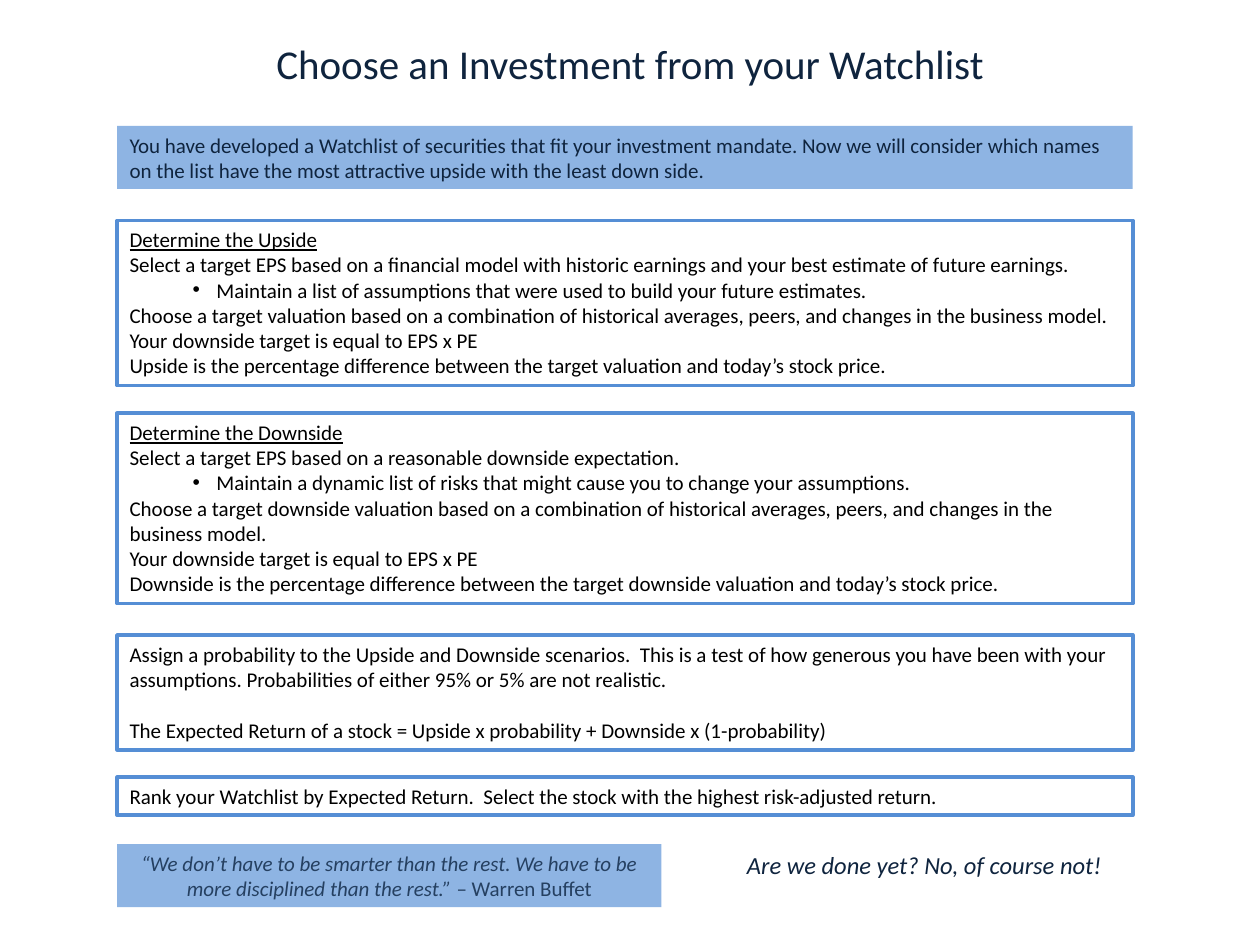
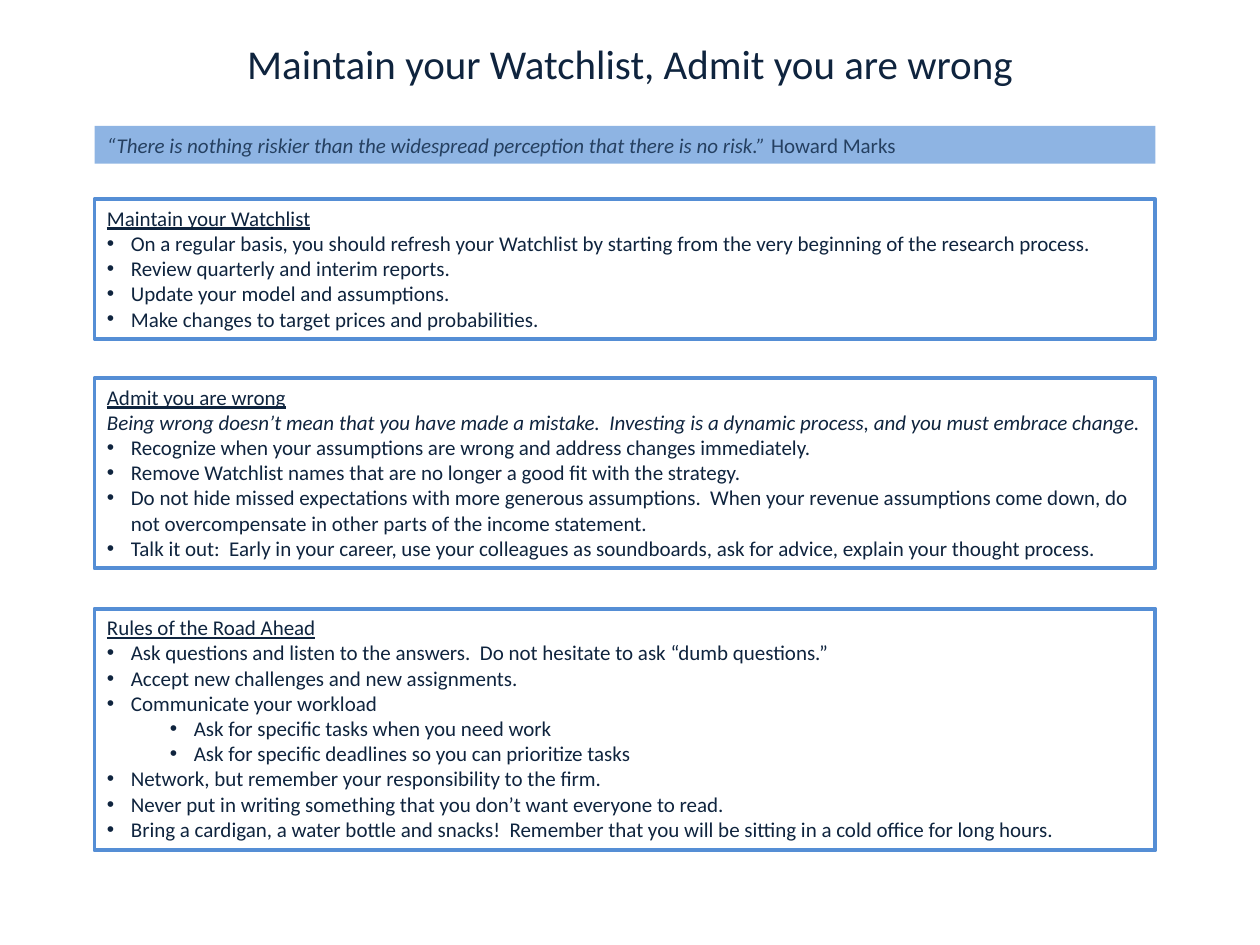
"""Build two slides on choosing an investment and maintaining a watchlist."""
from dataclasses import dataclass

from lxml import etree
from pptx import Presentation
from pptx import util as u
from pptx.dml.color import RGBColor
from pptx.enum import shapes, text
from pptx.oxml import ns


@dataclass(frozen=True)
class Theme:
    font: str = "Calibri"
    navy: str = "0F243E"
    slate: str = "254061"
    black: str = "000000"
    band: str = "8EB4E3"
    frame: str = "558ED5"
    title_size: float = 23.4
    remark_size: int = 14
    body_size: int = 12
    body_line: float = 14.6
    frame_width: float = 2.25


THEME = Theme()
PX = u.Inches(1) // 100
BULLET_HANG = 19
INDENTS = {"bullet": 19, "sub": 69}


def px(length):
    return u.Emu(length * PX)


def add_text(page, bounds, lines, color=THEME.navy, size=THEME.body_size,
             fill=None, frame=None, align=text.PP_ALIGN.LEFT,
             anchor=text.MSO_ANCHOR.TOP):
    """Add a text box from lines of (style, span, upright span)."""
    place = [px(length) for length in bounds]
    if fill or frame:
        box = page.shapes.add_shape(shapes.MSO_SHAPE.RECTANGLE, *place)
        box.shadow.inherit = False
    else:
        box = page.shapes.add_textbox(*place)
    if fill:
        box.fill.solid()
        box.fill.fore_color.rgb = RGBColor.from_string(fill)
    else:
        box.fill.background()
    if frame:
        box.line.color.rgb = RGBColor.from_string(frame)
        box.line.width = u.Pt(THEME.frame_width)
    else:
        box.line.fill.background()
    body = box.text_frame
    body.word_wrap = True
    body.vertical_anchor = anchor
    for number, (style, *spans) in enumerate(lines):
        para = body.paragraphs[0] if number == 0 else body.add_paragraph()
        para.alignment = align
        if style == "spaced":
            para.space_before = u.Pt(THEME.body_line)
        if style in INDENTS:
            layout = para._p.get_or_add_pPr()
            layout.set("marL", str(px(INDENTS[style])))
            layout.set("indent", str(-px(BULLET_HANG)))
            etree.SubElement(layout, ns.qn("a:buFont")).set("typeface", "Arial")
            etree.SubElement(layout, ns.qn("a:buChar")).set("char", "•")
        for order, words in enumerate(spans):
            span = para.add_run()
            span.text = words
            span.font.name = THEME.font
            span.font.size = u.Pt(size)
            span.font.color.rgb = RGBColor.from_string(color)
            span.font.underline = style == "heading"
            span.font.italic = style == "italic" and order == 0


def add_page(deck, title):
    page = deck.slides.add_slide(deck.slide_layouts[6])
    add_text(page, (75, 25, 850, 50), [("plain", title)], size=THEME.title_size,
             align=text.PP_ALIGN.CENTER, anchor=text.MSO_ANCHOR.MIDDLE)
    return page


deck = Presentation()
deck.slide_width, deck.slide_height = px(1000), px(750)

choose = add_page(deck, "Choose an Investment from your Watchlist")
add_text(choose, (93, 100, 806, 50), [
    ("plain", "You have developed a Watchlist of securities that fit your investment mandate. Now we will "
              "consider which names on the list have the most attractive upside with the least down side."),
], fill=THEME.band)

choose_steps = [
    (175, 131, [
        ("heading", "Determine the Upside"),
        ("plain", "Select a target EPS based on a financial model with historic earnings and your best "
                  "estimate of future earnings."),
        ("sub", "Maintain a list of assumptions that were used to build your future estimates."),
        ("plain", "Choose a target valuation based on a combination of historical averages, peers, and "
                  "changes in the business model."),
        ("plain", "Your downside target is equal to EPS x PE"),
        ("plain", "Upside is the percentage difference between the target valuation and today’s stock price."),
    ]),
    (328, 151, [
        ("heading", "Determine the Downside"),
        ("plain", "Select a target EPS based on a reasonable downside expectation."),
        ("sub", "Maintain a dynamic list of risks that might cause you to change your assumptions."),
        ("plain", "Choose a target downside valuation based on a combination of historical averages, peers, "
                  "and changes in the business model."),
        ("plain", "Your downside target is equal to EPS x PE"),
        ("plain", "Downside is the percentage difference between the target downside valuation and "
                  "today’s stock price."),
    ]),
    (504, 91, [
        ("plain", "Assign a probability to the Upside and Downside scenarios.  This is a test of how generous "
                  "you have been with your assumptions. Probabilities of either 95% or 5% are not realistic."),
        ("spaced", "The Expected Return of a stock = Upside x probability + Downside x (1-probability)"),
    ]),
    (617, 30, [
        ("plain", "Rank your Watchlist by Expected Return.  Select the stock with the highest "
                  "risk-adjusted return."),
    ]),
]
for top, height, lines in choose_steps:
    add_text(choose, (93, top, 806, height), lines, color=THEME.black, frame=THEME.frame)

add_text(choose, (93, 670, 432, 50), [
    ("italic", "“We don’t have to be smarter than the rest. We have to be more disciplined than the rest.” ",
     "– Warren Buffet"),
], color=THEME.slate, fill=THEME.band, align=text.PP_ALIGN.CENTER)
add_text(choose, (583, 670, 315, 34), [("italic", "Are we done yet? No, of course not!")],
         size=THEME.remark_size)

maintain = add_page(deck, "Maintain your Watchlist, Admit you are wrong")
add_text(maintain, (75, 100, 842, 30), [
    ("italic", "“There is nothing riskier than the widespread perception that there is no risk.” ",
     "Howard Marks"),
], color=THEME.slate, fill=THEME.band)

maintain_steps = [
    (158, 111, [
        ("heading", "Maintain your Watchlist"),
        ("bullet", "On a regular basis, you should refresh your Watchlist by starting from the very "
                   "beginning of the research process."),
        ("bullet", "Review quarterly and interim reports."),
        ("bullet", "Update your model and assumptions."),
        ("bullet", "Make changes to target prices and probabilities."),
    ]),
    (300, 151, [
        ("heading", "Admit you are wrong"),
        ("italic", "Being wrong doesn’t mean that you have made a mistake.  Investing is a dynamic process, "
                   "and you must embrace change."),
        ("bullet", "Recognize when your assumptions are wrong and address changes immediately."),
        ("bullet", "Remove Watchlist names that are no longer a good fit with the strategy."),
        ("bullet", "Do not hide missed expectations with more generous assumptions.  When your revenue "
                   "assumptions come down, do not overcompensate in other parts of the income statement."),
        ("bullet", "Talk it out:  Early in your career, use your colleagues as soundboards, ask for advice, "
                   "explain your thought process."),
    ]),
    (483, 192, [
        ("heading", "Rules of the Road Ahead"),
        ("bullet", "Ask questions and listen to the answers.  Do not hesitate to ask “dumb questions.”"),
        ("bullet", "Accept new challenges and new assignments."),
        ("bullet", "Communicate your workload"),
        ("sub", "Ask for specific tasks when you need work"),
        ("sub", "Ask for specific deadlines so you can prioritize tasks"),
        ("bullet", "Network, but remember your responsibility to the firm."),
        ("bullet", "Never put in writing something that you don’t want everyone to read."),
        ("bullet", "Bring a cardigan, a water bottle and snacks!  Remember that you will be sitting in a "
                   "cold office for long hours."),
    ]),
]
for top, height, lines in maintain_steps:
    add_text(maintain, (75, top, 842, height), lines, frame=THEME.frame)

deck.save("out.pptx")
